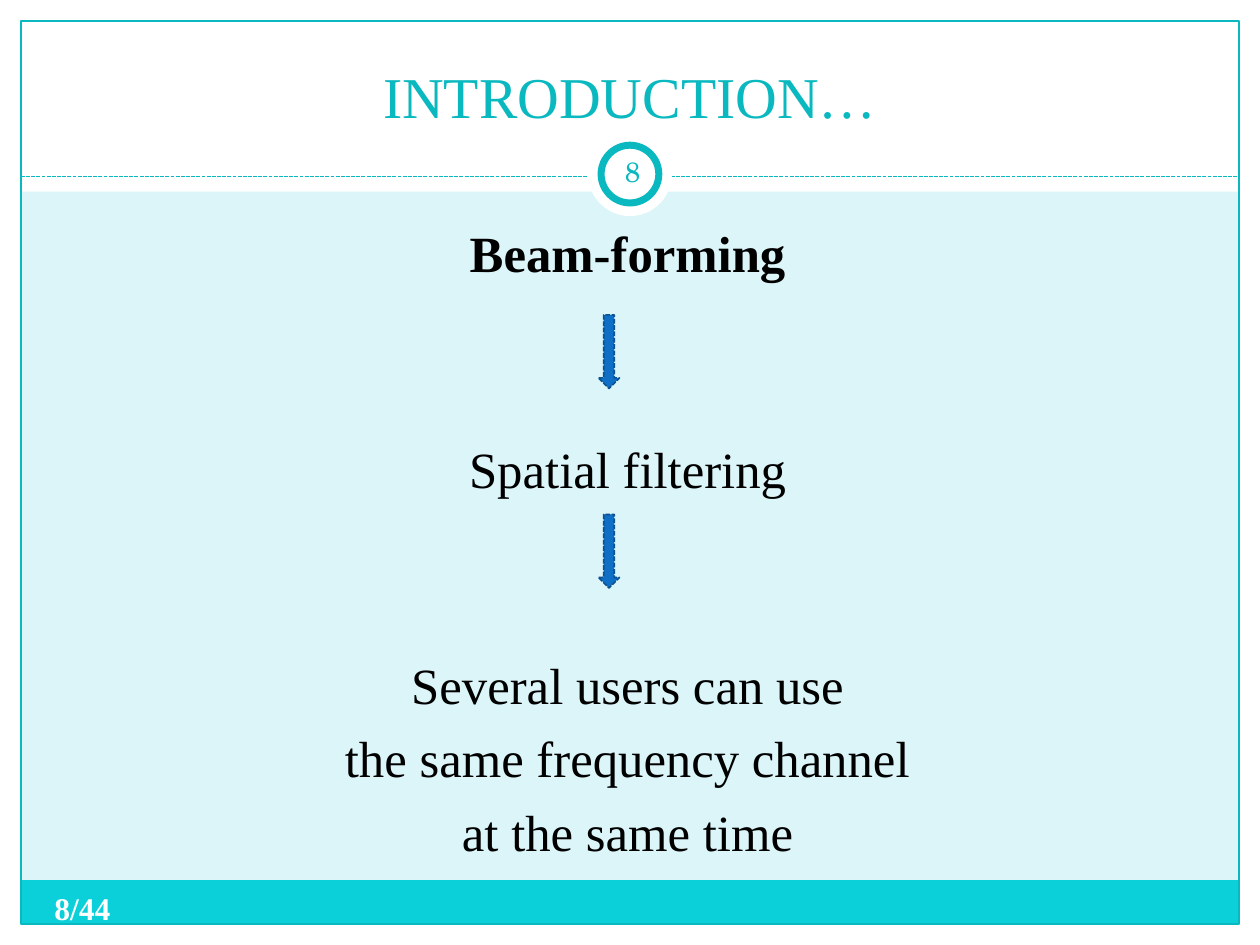
from pptx import Presentation
from pptx.dml.color import RGBColor
from pptx.enum.dml import MSO_LINE
from pptx.enum.shapes import MSO_CONNECTOR, MSO_SHAPE
from pptx.enum.text import MSO_ANCHOR, MSO_AUTO_SIZE, PP_ALIGN
from pptx.oxml.ns import qn
from pptx.util import Pt
from lxml.etree import SubElement

WHITE = RGBColor(0xFF, 0xFF, 0xFF)
BLACK = RGBColor(0, 0, 0)
PALE = RGBColor(0xDB, 0xF5, 0xF9)
CYAN = RGBColor(0x0B, 0xD0, 0xD9)
TEAL = RGBColor(0x0A, 0xB8, 0xBF)
BLUE = RGBColor(0x0F, 0x6F, 0xC6)
NAVY = RGBColor(0x0B, 0x52, 0x92)
SERIF = "Times New Roman"

W, H, EDGE = 720, 540, 12
RULE_Y = 101
LINE_GAP, ARROW_GAP = 7.3, 88.4

TITLE = "INTRODUCTION…"
# text, space before, bold
STEPS = [
    ("Beam-forming", 0, True),
    ("Spatial filtering", ARROW_GAP, False),
    ("Several users can use", ARROW_GAP, False),
    ("the same frequency channel", LINE_GAP, False),
    ("at the same time", LINE_GAP, False),
]
ARROW_TOPS = [180, 294]
# left, top, width, height, fill
BANDS = [
    (0, H - EDGE, W, EDGE, WHITE),
    (0, 0, W, 109.5, WHITE),
    (0, 0, EDGE, H, WHITE),
    (W - EDGE, 0, EDGE, H, WHITE),
    (EDGE, 503, W - 2 * EDGE, 25, CYAN),
]

prs = Presentation()
prs.slide_width, prs.slide_height = Pt(W), Pt(H)
s = prs.slides.add_slide(prs.slide_layouts[1])
s.background.fill.solid()
s.background.fill.fore_color.rgb = PALE


def place(sp, left, top, width, height):
    sp.left, sp.top, sp.width, sp.height = map(Pt, (left, top, width, height))


def add_shape(kind, box, fill=None, line=None, weight=0.75):
    sp = s.shapes.add_shape(kind, *map(Pt, box))
    sp.shadow.inherit = False
    if fill is None:
        sp.fill.background()
    else:
        sp.fill.solid()
        sp.fill.fore_color.rgb = fill
    if line is None:
        sp.line.fill.background()
    else:
        sp.line.color.rgb = line
        sp.line.width = Pt(weight)
    return sp


def style(p, size, color, font=SERIF, bold=False, align=PP_ALIGN.CENTER):
    p.alignment = align
    p.font.size, p.font.name, p.font.bold = Pt(size), font, bold
    p.font.color.rgb = color


def add_label(text, box, anchor, *fmt, **kw):
    tf = s.shapes.add_textbox(*map(Pt, box)).text_frame
    tf.word_wrap = True
    tf.vertical_anchor = anchor
    tf.text = text
    style(tf.paragraphs[0], *fmt, **kw)
    return tf


# Frame, header rule and number ring
for *box, color in BANDS:
    add_shape(MSO_SHAPE.RECTANGLE, box, color)
add_shape(MSO_SHAPE.RECTANGLE, (EDGE, EDGE, W - 2 * EDGE, H - 2 * EDGE), line=TEAL)

rule = s.shapes.add_connector(MSO_CONNECTOR.STRAIGHT, Pt(EDGE), Pt(RULE_Y),
                              Pt(W - EDGE), Pt(RULE_Y))
rule.line.color.rgb = TEAL
rule.line.width = Pt(0.75)
rule.line.dash_style = MSO_LINE.SQUARE_DOT
SubElement(rule.element.spPr, qn("a:effectLst"))

for size, line in ((48, None), (33, TEAL)):
    add_shape(MSO_SHAPE.OVAL, ((W - size) / 2, 99.5 - size / 2, size, size),
              WHITE, line, 4)

# Title and steps, in front of the frame
title, body = s.shapes.title, s.placeholders[1]
for sp in (title, body):
    s.shapes.element.append(sp.element)
    sp.text_frame.auto_size = MSO_AUTO_SIZE.NONE

place(title, 24, 18, 672, 60)
title.text_frame.text = TITLE
title.text_frame.vertical_anchor = MSO_ANCHOR.BOTTOM
style(title.text_frame.paragraphs[0], 33, TEAL)

place(body, 24, 120, 669.5, 360)
tf = body.text_frame
tf.margin_top = Pt(7)
for i, (text, gap, bold) in enumerate(STEPS):
    p = tf.add_paragraph() if i else tf.paragraphs[0]
    p.text = text
    style(p, 29, BLACK, bold=bold)
    p.space_before = Pt(gap)
    pPr = p._p.get_or_add_pPr()
    pPr.set("marL", "0")
    pPr.set("indent", "0")
    pPr.insert_element_before(pPr.makeelement(qn("a:buNone")),
                              "a:tabLst", "a:defRPr", "a:extLst")

for top in ARROW_TOPS:
    arrow = add_shape(MSO_SHAPE.DOWN_ARROW, (342, top, 12, 42), BLUE, NAVY, 0.9)
    arrow.line.dash_style = MSO_LINE.SQUARE_DOT

# Page numbers
add_label("8/44", (24, 504.7, 282, 29), MSO_ANCHOR.TOP, 18, WHITE,
          bold=True, align=PP_ALIGN.LEFT)
tf = add_label("8", (343.5, 80.6, 36, 34.6), MSO_ANCHOR.MIDDLE, 16, TEAL,
               font="TeX Gyre Schola")
tf.margin_left = tf.margin_right = tf.margin_top = tf.margin_bottom = Pt(3.6)

prs.save("out.pptx")
